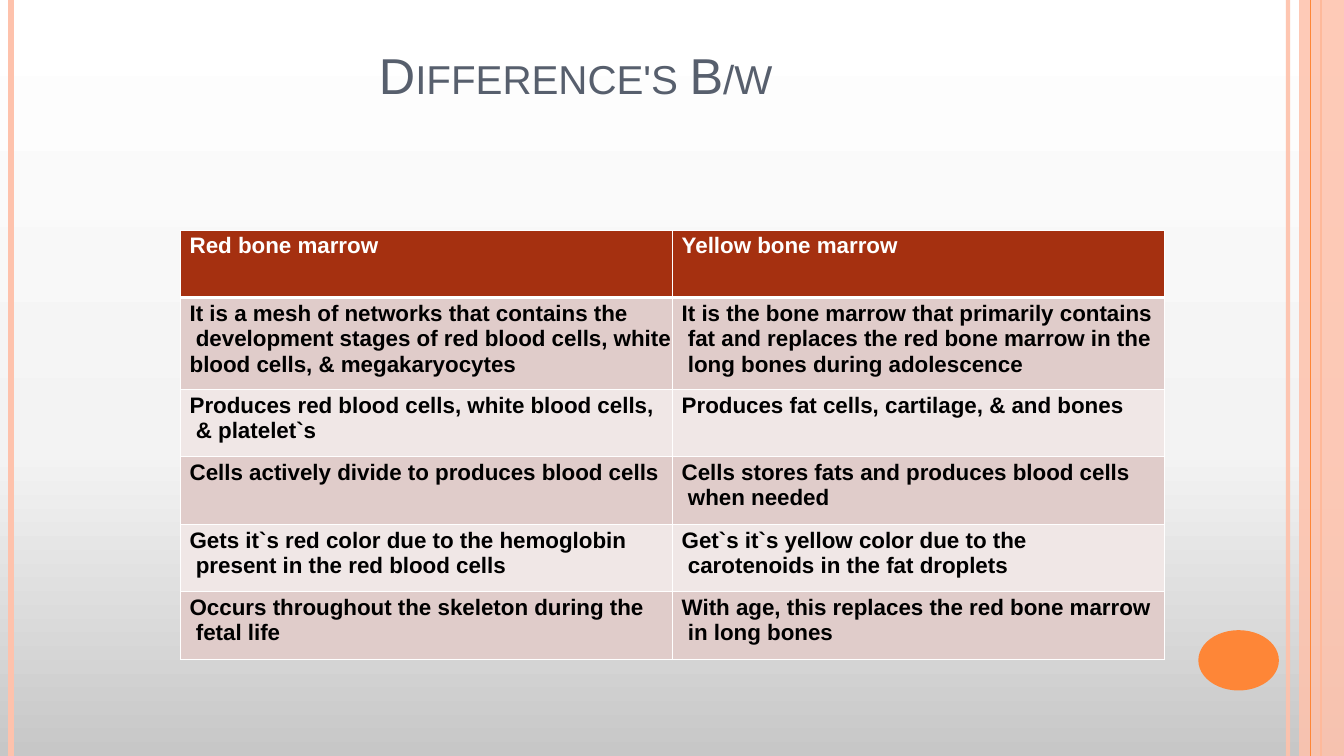
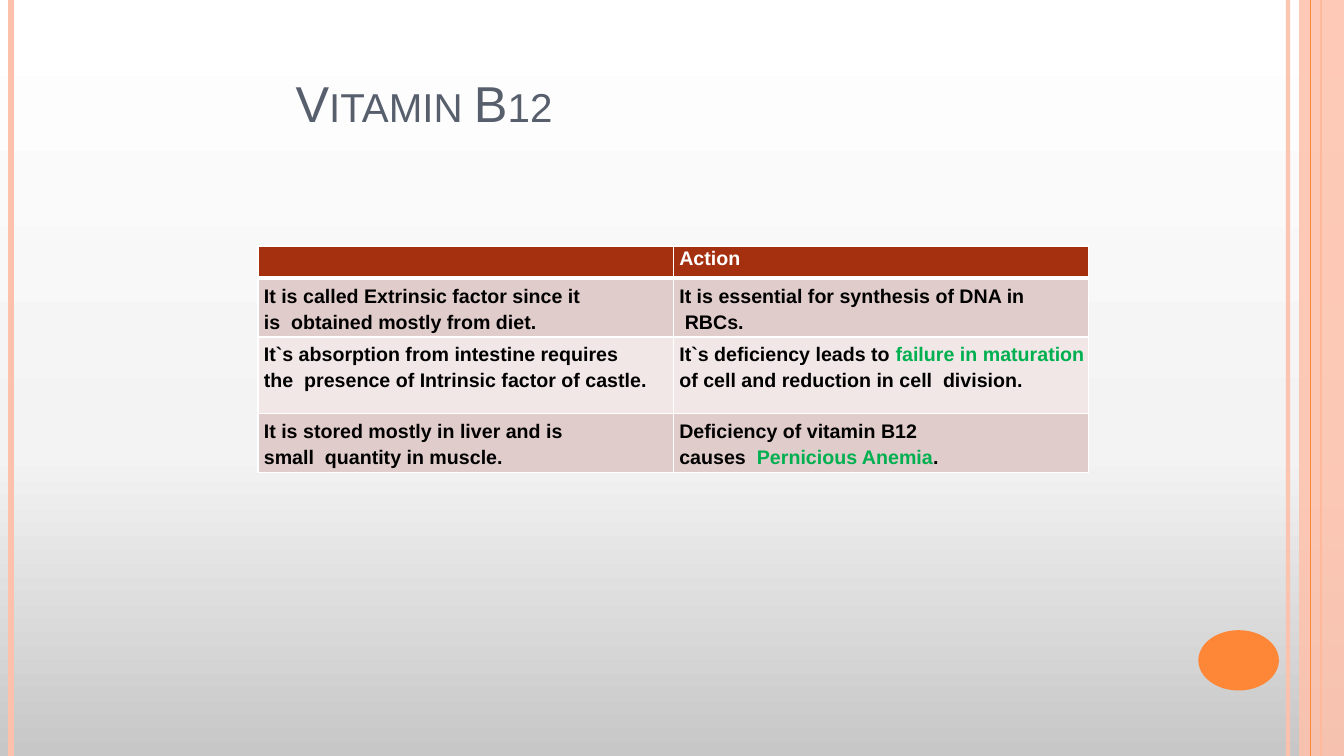
"""Build two slides that compare bone marrow types and describe vitamin B12."""
import copy

import pptx
import pptx.dml.color
import pptx.enum.shapes
import pptx.enum.text
import pptx.oxml
import pptx.oxml.ns
import pptx.util

Cm = pptx.util.Cm
Pt = pptx.util.Pt
COLORS = {
    "title": "575F6D", "peach": "FEC2AC", "orange": "FE8637",
    "header": "A53010", "odd_row": "E0CCCA", "even_row": "F0E7E6",
    "white": "FFFFFF", "black": "000000", "highlight": "00B050",
}
BACKDROP = [(0, "C7C7C7"), (0.4, "F3F3F3"), (1, "FFFFFF")]
FONT = "Arial"
HARD_SPACE = chr(160)
WIDTH, HEIGHT = Cm(33.87), Cm(19.05)
EDGE_LINES = [
    (32.46, "peach", 3, 93), (0.28, "peach", 4.5, 100),
    (33.3, "orange", 1.5, 100), (33.02, "orange", 0.75, 100),
]

SLIDES = [
    {
        "title": "Difference's B/w", "title_box": (9.52, 1.07, 17.86, 1.57),
        "corner": (4.55, 5.8), "column": 12.4, "indent": 0.23,
        "heights": [1.7, 2.31, 1.7, 1.7, 1.7, 1.7],
        "size": 16, "spacing": 1.02, "header_top": 0.08,
        "rows": [
            ("Red bone marrow", "Yellow bone marrow"),
            ("It is a mesh of networks that contains the ~development stages of red blood cells, "
             "white blood cells, & megakaryocytes",
             "It is the bone marrow that primarily contains ~fat and replaces the red bone marrow "
             "in the ~long bones during adolescence"),
            ("Produces red blood cells, white blood cells, ~& platelet`s",
             "Produces fat cells, cartilage, & and bones"),
            ("Cells actively divide to produces blood cells",
             "Cells stores fats and produces blood cells ~when needed"),
            ("Gets it`s red color due to the hemoglobin ~present in the red blood cells",
             "Get`s it`s yellow color due to the ~carotenoids in the fat droplets"),
            ("Occurs throughout the skeleton during the ~fetal life",
             "With age, this replaces the red bone marrow ~in long bones"),
        ],
    },
    {
        "title": "Vitamin B12", "title_box": (7.42, 1.78, 7.32, 1.57),
        "corner": (6.5, 6.2), "column": 10.47, "indent": 0.15,
        "heights": [0.76, 1.35, 1.93, 1.35],
        "size": 14, "spacing": 1.18, "header_top": 0.05,
        "rows": [
            ("", "Action"),
            ("It is called Extrinsic factor since it is~~obtained mostly from diet.",
             "It is essential for synthesis of DNA in ~RBCs."),
            ("It`s absorption from intestine requires the~~presence of Intrinsic factor of castle.",
             "It`s deficiency leads to |failure in maturation |of cell and reduction in "
             "cell~~division."),
            ("It is stored mostly in liver and is small~~quantity in muscle.",
             "Deficiency of vitamin B12 causes~~|Pernicious Anemia|."),
        ],
    },
]


def rgb(name):
    return pptx.dml.color.RGBColor.from_string(COLORS[name])


def set_opacity(part, percent):
    for color in part.element.spPr.iter(pptx.oxml.ns.qn("a:srgbClr")):
        alpha = color.makeelement(pptx.oxml.ns.qn("a:alpha"), {"val": str(percent * 1000)})
        color.append(alpha)


prs = pptx.Presentation()
prs.slide_width, prs.slide_height = WIDTH, HEIGHT

backdrop = prs.slide_master.background.fill
backdrop.gradient()
backdrop.gradient_angle = 90
stop_list = prs.slide_master.element.xpath(".//p:bg//a:gsLst")[0]
stop_list.append(copy.deepcopy(stop_list[0]))
for stop, (position, color) in zip(backdrop.gradient_stops, BACKDROP):
    stop.position = position
    stop.color.rgb = pptx.dml.color.RGBColor.from_string(color)

for content in SLIDES:
    slide = prs.slides.add_slide(prs.slide_layouts[6])

    for index, (x, color, weight, opacity) in enumerate(EDGE_LINES):
        if index == len(EDGE_LINES) - 1:
            band = slide.shapes.add_shape(
                pptx.enum.shapes.MSO_SHAPE.RECTANGLE, Cm(32.74), 0, Cm(1.13), HEIGHT)
            band.shadow.inherit = False
            band.fill.solid()
            band.fill.fore_color.rgb = rgb("peach")
            band.line.fill.background()
            set_opacity(band, 86)
        edge = slide.shapes.add_connector(
            pptx.enum.shapes.MSO_CONNECTOR.STRAIGHT, Cm(x), 0, Cm(x), HEIGHT)
        edge.line.color.rgb = rgb(color)
        edge.line.width = Pt(weight)
        set_opacity(edge, opacity)
        edge.element.spPr.append(
            edge.element.makeelement(pptx.oxml.ns.qn("a:effectLst"), {}))

    badge = slide.shapes.add_shape(
        pptx.enum.shapes.MSO_SHAPE.OVAL, Cm(30.2), Cm(15.88), Cm(2.03), Cm(1.52))
    badge.shadow.inherit = False
    badge.fill.solid()
    badge.fill.fore_color.rgb = rgb("orange")
    badge.line.fill.background()

    heading = slide.shapes.add_textbox(*map(Cm, content["title_box"])).text_frame
    heading.word_wrap = True
    heading.vertical_anchor = pptx.enum.text.MSO_ANCHOR.BOTTOM
    heading.margin_left = heading.margin_top = Cm(0.03)
    heading.margin_right = heading.margin_bottom = 0
    title = heading.paragraphs[0].add_run()
    title.text = content["title"]
    title.font.name, title.font.size = FONT, Pt(36)
    title.font.color.rgb = rgb("title")
    title.font.element.set("cap", "small") if hasattr(title.font, "element") else \
        title._r.get_or_add_rPr().set("cap", "small")

    rows, heights = content["rows"], content["heights"]
    left, top = content["corner"]
    table = slide.shapes.add_table(
        len(rows), 2, Cm(left), Cm(top), Cm(2 * content["column"]), Cm(sum(heights))).table
    table.horz_banding = False
    for row, height in zip(table.rows, heights):
        row.height = Cm(height)

    for r, texts in enumerate(rows):
        is_header = r == 0
        row_fill = "header" if is_header else "odd_row" if r % 2 else "even_row"
        for c, text in enumerate(texts):
            cell = table.cell(r, c)
            cell.fill.solid()
            cell.fill.fore_color.rgb = rgb(row_fill)
            cell.margin_left = Cm(content["indent"])
            cell.margin_right = cell.margin_bottom = 0
            cell.margin_top = Cm(content["header_top"] if is_header else 0.08)

            paragraph = cell.text_frame.paragraphs[0]
            if not is_header:
                paragraph.line_spacing = content["spacing"]
            for part, words in enumerate(text.split("|") if text else []):
                run = paragraph.add_run()
                run.text = words.replace("~", HARD_SPACE)
                run.font.name, run.font.size = FONT, Pt(content["size"])
                run.font.bold = True
                run.font.color.rgb = rgb(
                    "white" if is_header else "highlight" if part % 2 else "black")

            weights = {"L": 1, "R": 1, "T": 3 if r == 1 else 1, "B": 3 if is_header else 1}
            cell_properties = cell._tc.get_or_add_tcPr()
            for place, (side, weight) in enumerate(weights.items()):
                cell_properties.insert(place, pptx.oxml.parse_xml(
                    f'<a:ln{side} {pptx.oxml.ns.nsdecls("a")} w="{Pt(weight)}"><a:solidFill>'
                    f'<a:srgbClr val="{COLORS["white"]}"/></a:solidFill></a:ln{side}>'))

prs.save("out.pptx")
